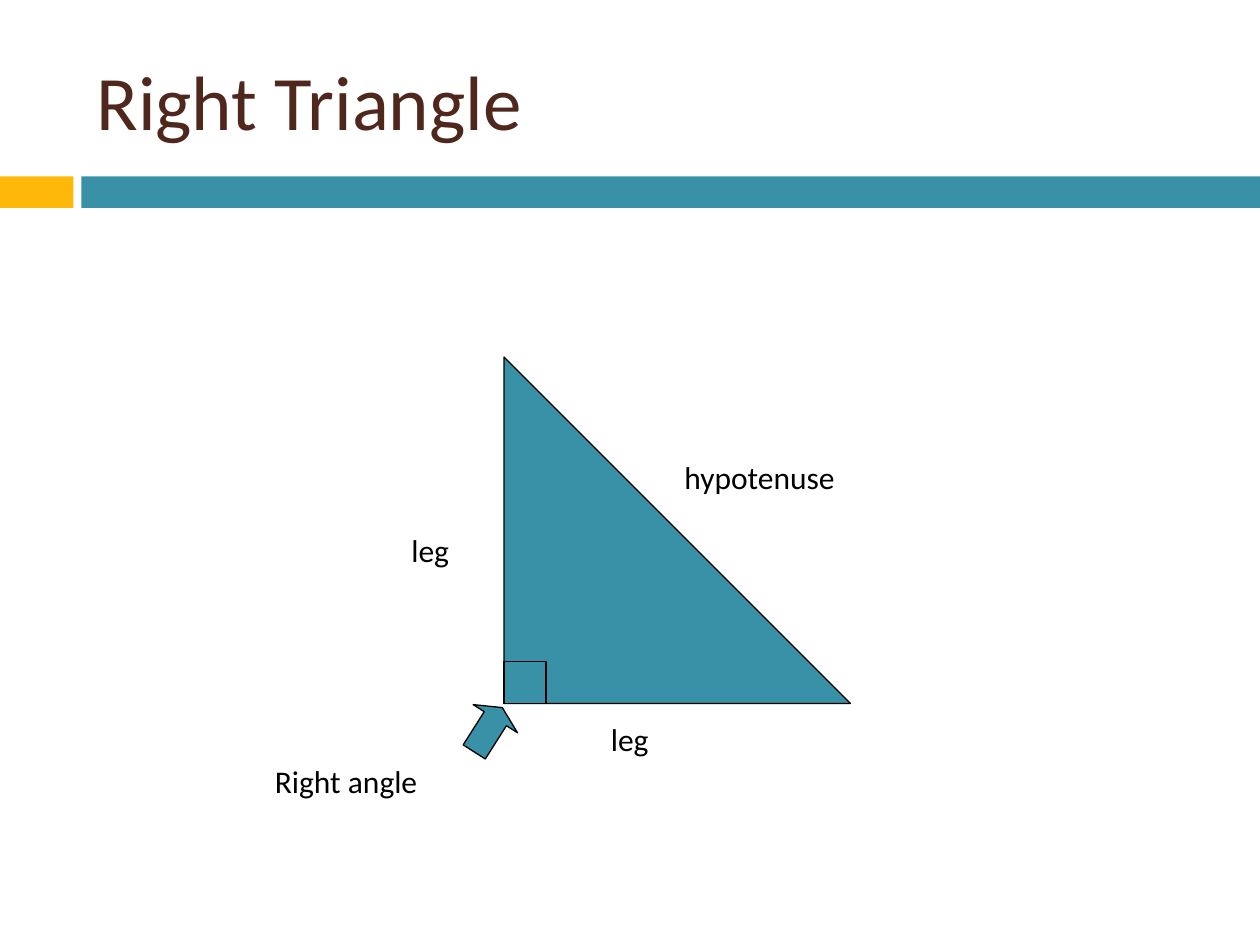
from pptx import Presentation
from pptx.dml.color import RGBColor
from pptx.enum.shapes import MSO_SHAPE
from pptx.enum.text import MSO_ANCHOR
from pptx.util import Pt

RECTANGLE = MSO_SHAPE.RECTANGLE
RIGHT_TRIANGLE = MSO_SHAPE.RIGHT_TRIANGLE
LEFT_ARROW = MSO_SHAPE.LEFT_ARROW
TOP, MIDDLE = MSO_ANCHOR.TOP, MSO_ANCHOR.MIDDLE

FONT = "Calibri"
COLORS = {"teal": "3891A7", "gold": "FEB80A", "brown": "4F271C", "black": "000000"}
PAGE_WIDTH, PAGE_HEIGHT = 720, 540

# Content: text, left, top, width, height
TITLE = ("Right Triangle", (48, 18, 642, 78))
LABELS = [
    ("leg", (342, 408, 67, 36)),
    ("leg", (228, 300, 44, 36)),
    ("hypotenuse", (384, 258, 124, 36)),
    ("Right angle", (150, 432, 125, 36)),
]

# Geometry
BAND_TOP, BAND_HEIGHT = 100.8, 18
GOLD_WIDTH, TEAL_LEFT = 42, 46.5
CORNER_LEFT, CORNER_BOTTOM = 288, 402  # vertex of the right angle
LEG_LENGTH, MARK_SIZE = 198, 24
ARROW_FRAME, ARROW_ROTATION = (264, 402, 30, 30), 122.4


def add_text(page, text, frame, size=18, color="black", anchor=TOP):
    box = page.shapes.add_textbox(*map(Pt, frame))
    box.text_frame.word_wrap = True
    box.text_frame.vertical_anchor = anchor
    span = box.text_frame.paragraphs[0].add_run()
    span.text = text
    span.font.name = FONT
    span.font.size = Pt(size)
    span.font.color.rgb = RGBColor.from_string(COLORS[color])
    return box


def add_figure(shapes, kind, frame, fill="teal", outlined=True):
    figure = shapes.add_shape(kind, *map(Pt, frame))
    figure.shadow.inherit = False
    figure.fill.solid()
    figure.fill.fore_color.rgb = RGBColor.from_string(COLORS[fill])
    if outlined:
        figure.line.color.rgb = RGBColor.from_string(COLORS["black"])
        figure.line.width = Pt(0.75)
    else:
        figure.line.fill.background()
    return figure


def corner_frame(size):
    """Square frame whose bottom left corner is the right angle."""
    return CORNER_LEFT, CORNER_BOTTOM - size, size, size


deck = Presentation()
deck.slide_width, deck.slide_height = Pt(PAGE_WIDTH), Pt(PAGE_HEIGHT)
page = deck.slides.add_slide(deck.slide_layouts[6])

# Band under the title
for left, width, color in [
    (0, GOLD_WIDTH, "gold"),
    (TEAL_LEFT, PAGE_WIDTH - TEAL_LEFT, "teal"),
]:
    add_figure(page.shapes, RECTANGLE, (left, BAND_TOP, width, BAND_HEIGHT),
               fill=color, outlined=False)

# Side labels and title
for text, frame in LABELS:
    add_text(page, text, frame)
add_text(page, *TITLE, size=44, color="brown", anchor=MIDDLE)

# Triangle grouped with its right angle mark
triangle = page.shapes.add_group_shape()
add_figure(triangle.shapes, RIGHT_TRIANGLE, corner_frame(LEG_LENGTH))
add_figure(triangle.shapes, RECTANGLE, corner_frame(MARK_SIZE))

# Arrow pointing at the right angle
arrow = add_figure(page.shapes, LEFT_ARROW, ARROW_FRAME)
arrow.rotation = ARROW_ROTATION
arrow.adjustments[0], arrow.adjustments[1] = 0.5, 0.25

deck.save("out.pptx")
